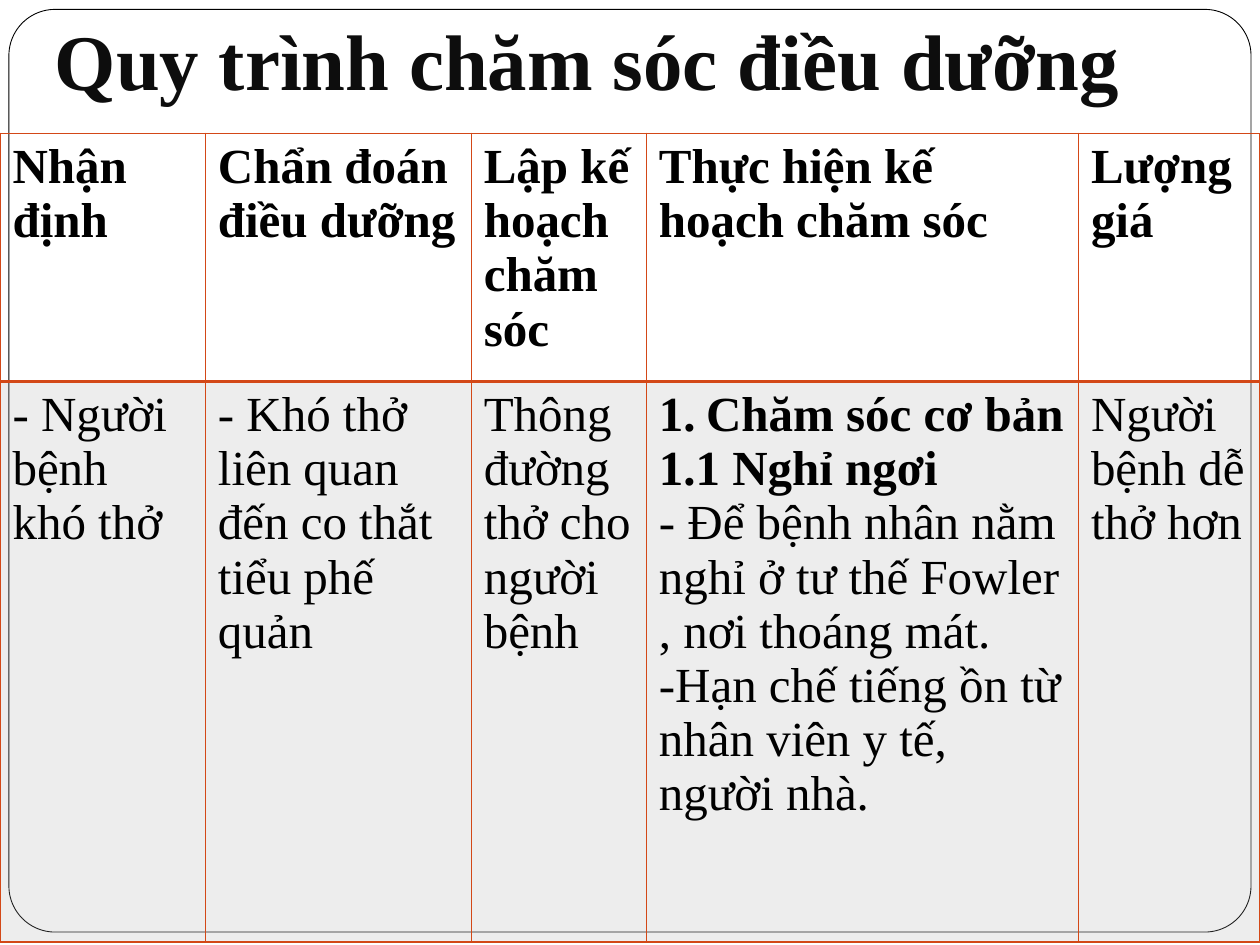
import pptx
import pptx.dml.color
import pptx.enum.shapes
import pptx.enum.text
import pptx.oxml.ns
import pptx.util
from lxml import etree
from pptx.util import Cm

BLACK = pptx.dml.color.RGBColor(0x00, 0x00, 0x00)
WHITE = pptx.dml.color.RGBColor(0xFF, 0xFF, 0xFF)
TITLE_COLOR = pptx.dml.color.RGBColor(0x0D, 0x0D, 0x0D)
BORDER_COLOR = pptx.dml.color.RGBColor(0xD3, 0x48, 0x17)
BODY_FILL = pptx.dml.color.RGBColor(0xA6, 0xA6, 0xA6)
FONT = "Times New Roman"
TABLE_SIZE = 28

COLUMN_WIDTHS = [4.14, 5.36, 3.53, 8.71, 3.66]
ROW_HEIGHTS = [4.47, 11.3]
HEADERS = [
    "Nhận định",
    "Chẩn đoán điều dưỡng",
    "Lập kế hoạch chăm sóc",
    "Thực hiện kế hoạch chăm sóc",
    "Lượng giá",
]
CARE_STEPS = [
    ("Chăm sóc cơ bản", True),
    ("1.1 Nghỉ ngơi", True),
    ("- Để bệnh nhân nằm nghỉ ở tư thế Fowler , nơi thoáng mát.", False),
    ("-Hạn chế tiếng ồn từ nhân viên y tế, người nhà.", False),
]
BODY = [
    [("- Người bệnh khó thở", False)],
    [("- Khó thở liên quan đến co thắt tiểu phế quản", False)],
    [("Thông đường thở cho người bệnh", False)],
    CARE_STEPS,
    [("Người bệnh dễ thở hơn", False)],
]


def add_child(parent, tag, **attributes):
    """Append a drawing element with the given attributes."""
    return etree.SubElement(parent, pptx.oxml.ns.qn(tag), **attributes)


def add_run(paragraph, text, size, color, bold):
    """Add one formatted run to a paragraph."""
    run = paragraph.add_run()
    run.text = text
    run.font.name = FONT
    run.font.size = pptx.util.Pt(size)
    run.font.bold = bold
    run.font.color.rgb = color


def add_frame(slide):
    """Draw the rounded outline around the slide."""
    shape = slide.shapes.add_shape(
        pptx.enum.shapes.MSO_SHAPE.ROUNDED_RECTANGLE, Cm(0.18), Cm(0.19), Cm(25.04), Cm(18.6)
    )
    shape.adjustments[0] = 0.05
    shape.shadow.inherit = False
    shape.fill.solid()
    shape.fill.fore_color.rgb = WHITE
    shape.line.color.rgb = BLACK
    shape.line.width = pptx.util.Pt(0.5)


def add_title(slide, text):
    """Add the centred slide title."""
    shape = slide.shapes.add_textbox(Cm(0.66), Cm(0), Cm(22.35), Cm(2.39))
    frame = shape.text_frame
    frame.word_wrap = True
    frame.vertical_anchor = pptx.enum.text.MSO_ANCHOR.BOTTOM
    frame.margin_bottom = Cm(0.25)
    paragraph = frame.paragraphs[0]
    paragraph.alignment = pptx.enum.text.PP_ALIGN.CENTER
    add_run(paragraph, text, 45, TITLE_COLOR, True)


def set_borders(cell, widths):
    """Draw the left, right, top and bottom borders in the given point widths."""
    properties = cell._tc.get_or_add_tcPr()
    for side, width in zip("LRTB", widths):
        line = add_child(properties, f"a:ln{side}", w=str(pptx.util.Pt(width)))
        add_child(add_child(line, "a:solidFill"), "a:srgbClr", val=str(BORDER_COLOR))


def set_body_fill(cell):
    """Fill a cell with translucent grey."""
    cell.fill.solid()
    cell.fill.fore_color.rgb = BODY_FILL
    color = next(cell._tc.tcPr.iterchildren(pptx.oxml.ns.qn("a:solidFill")))[0]
    add_child(color, "a:alpha", val="20000")


def set_number(paragraph):
    """Number a paragraph with a hanging indent."""
    properties = paragraph._p.get_or_add_pPr()
    indent = Cm(0.95)
    properties.set("marL", str(indent))
    properties.set("indent", str(-indent))
    add_child(properties, "a:buFont", typeface="+mj-lt")
    add_child(properties, "a:buAutoNum", type="arabicPeriod")


def fill_text(cell, lines):
    """Write one paragraph for each text and bold pair."""
    frame = cell.text_frame
    for index, (text, bold) in enumerate(lines):
        paragraph = frame.add_paragraph() if index else frame.paragraphs[0]
        add_run(paragraph, text, TABLE_SIZE, BLACK, bold)


def add_care_table(slide):
    """Add the nursing care table."""
    table = slide.shapes.add_table(
        len(ROW_HEIGHTS), len(COLUMN_WIDTHS), Cm(0), Cm(2.69),
        Cm(sum(COLUMN_WIDTHS)), Cm(sum(ROW_HEIGHTS)),
    ).table
    table.first_row = False
    table.horz_banding = False
    for column, width in zip(table.columns, COLUMN_WIDTHS):
        column.width = Cm(width)
    for row, height in zip(table.rows, ROW_HEIGHTS):
        row.height = Cm(height)
    for index, (header, lines) in enumerate(zip(HEADERS, BODY)):
        header_cell, body_cell = table.cell(0, index), table.cell(1, index)
        fill_text(header_cell, [(header, True)])
        set_borders(header_cell, (1, 1, 1, 2))
        header_cell.fill.background()
        fill_text(body_cell, lines)
        set_borders(body_cell, (1, 1, 2, 1))
        set_body_fill(body_cell)
    care_cell = table.cell(1, BODY.index(CARE_STEPS))
    set_number(care_cell.text_frame.paragraphs[0])


def main():
    """Build and save the presentation."""
    presentation = pptx.Presentation()
    presentation.slide_width = Cm(25.4)
    presentation.slide_height = Cm(19.05)
    slide = presentation.slides.add_slide(presentation.slide_layouts[6])
    add_frame(slide)
    add_title(slide, "Quy trình chăm sóc điều dưỡng")
    add_care_table(slide)
    presentation.save("out.pptx")


if __name__ == "__main__":
    main()
